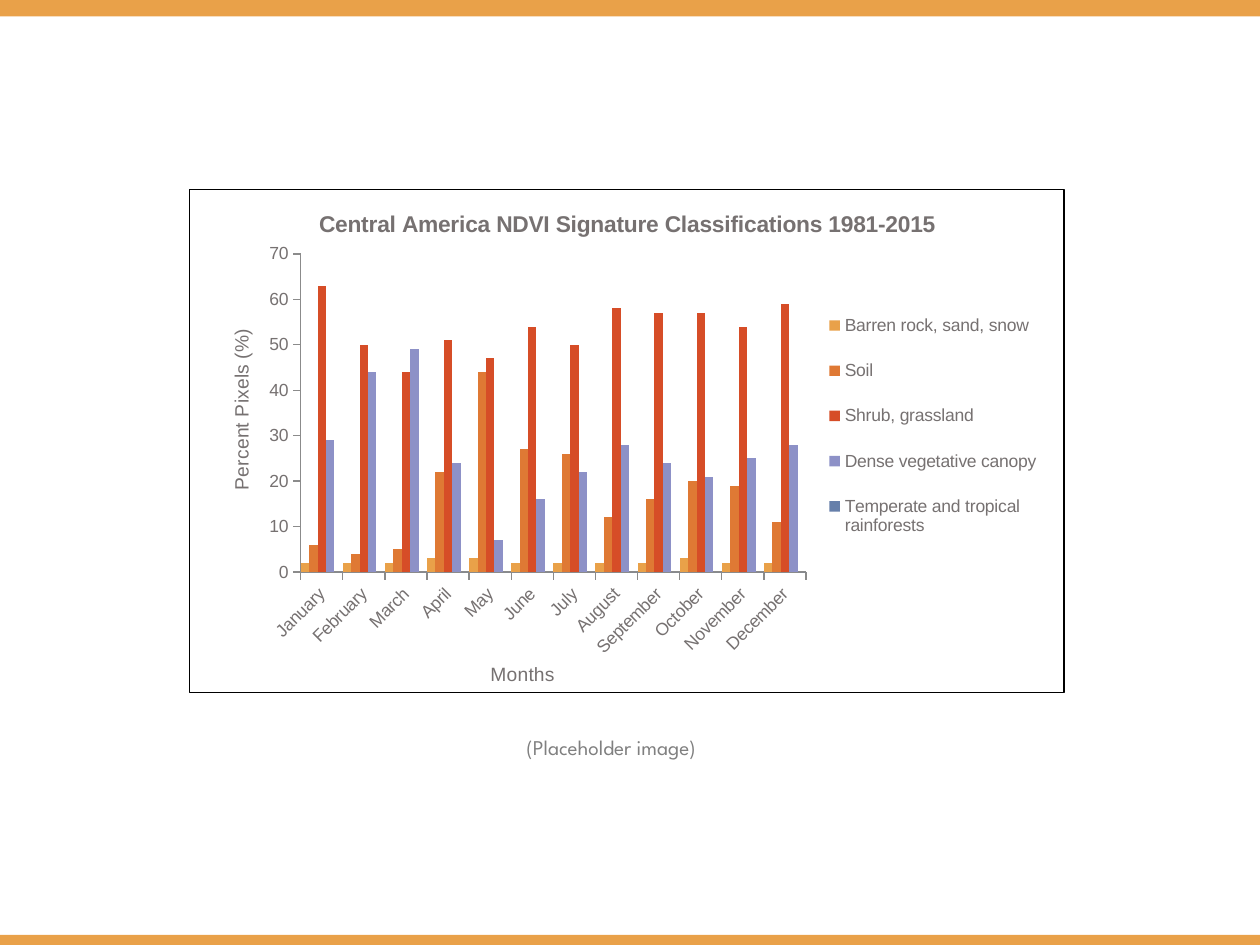
from lxml import etree
from pptx import Presentation
from pptx.chart.data import CategoryChartData
from pptx.dml.color import RGBColor
from pptx.enum.chart import XL_CHART_TYPE, XL_LEGEND_POSITION, XL_TICK_MARK
from pptx.enum.shapes import MSO_SHAPE
from pptx.enum.text import MSO_ANCHOR, MSO_AUTO_SIZE, PP_ALIGN
from pptx.oxml import parse_xml
from pptx.oxml.ns import nsdecls, qn
from pptx.util import Inches, Pt

COLUMN = XL_CHART_TYPE.COLUMN_CLUSTERED
RIGHT = XL_LEGEND_POSITION.RIGHT
OUTSIDE = XL_TICK_MARK.OUTSIDE
RECT = MSO_SHAPE.RECTANGLE
FIT_SHAPE = MSO_AUTO_SIZE.SHAPE_TO_FIT_TEXT
TOP = MSO_ANCHOR.TOP
LEFT = PP_ALIGN.LEFT

WIDTH, HEIGHT = Inches(10), Inches(7.5)
ORANGE = RGBColor(0xE9, 0xA1, 0x49)
RUST = RGBColor(0xDF, 0x79, 0x34)
RED = RGBColor(0xD6, 0x4D, 0x27)
LAVENDER = RGBColor(0x8D, 0x91, 0xC7)
BLUE = RGBColor(0x66, 0x7F, 0xAA)
TEXT_GRAY = RGBColor(0x76, 0x71, 0x71)
CAPTION_GRAY = RGBColor(0x80, 0x80, 0x80)
AXIS_GRAY = RGBColor(0x8B, 0x8B, 0x8B)

MONTHS = ["January", "February", "March", "April", "May", "June", "July",
          "August", "September", "October", "November", "December"]
CLASSES = [
    ("Barren rock, sand, snow", ORANGE, [2, 2, 2, 3, 3, 2, 2, 2, 2, 3, 2, 2]),
    ("Soil", RUST, [6, 4, 5, 22, 44, 27, 26, 12, 16, 20, 19, 11]),
    ("Shrub, grassland", RED, [63, 50, 44, 51, 47, 54, 50, 58, 57, 57, 54, 59]),
    ("Dense vegetative canopy", LAVENDER, [29, 44, 49, 24, 7, 16, 22, 28, 24, 21, 25, 28]),
    ("Temperate and tropical rainforests", BLUE, [0] * 12),
]
# Shares of the chart's size
PLOT_BOX = {"x": 0.127, "y": 0.128, "w": 0.578, "h": 0.633}
LEGEND_BOX = {"x": 0.72, "y": 0.2, "w": 0.26, "h": 0.54}
MONTHS_SPOT = {"x": 0.34, "y": 0.93}
PERCENT_SPOT = {"x": 0.04, "y": 0.27}


def set_font(font, size, color=TEXT_GRAY, name="Arial", bold=False):
    for key, value in {"size": Pt(size), "name": name, "bold": bold}.items():
        setattr(font, key, value)
    font.color.rgb = color


def set_title(title, text, size, bold=False):
    tf = title.text_frame
    tf.text = text
    set_font(tf.paragraphs[0].runs[0].font, size, bold=bold)


def add_band(slide, box):
    sp = slide.shapes.add_shape(RECT, *box)
    sp.shadow.inherit = False
    sp.fill.solid()
    sp.fill.fore_color.rgb = ORANGE
    sp.line.fill.background()


def place_part(part, box, after=None, target=None):
    """Fix a chart part at shares of the chart's size, its layout following the child named after."""
    for old in part.findall(qn("c:layout")):
        part.remove(old)
    layout = etree.Element(qn("c:layout"))
    manual = etree.SubElement(layout, qn("c:manualLayout"))
    values = {"layoutTarget": target} if target else {}
    values.update(xMode="edge", yMode="edge", **box)
    for tag, value in values.items():
        etree.SubElement(manual, qn(f"c:{tag}")).set("val", str(value))
    if after:
        part.find(qn(after)).addnext(layout)
    else:
        part.insert(0, layout)


def frame_chart(chart):
    """Draw a thin black border around the chart."""
    chart._chartSpace.chart.addnext(parse_xml(
        f'<c:spPr {nsdecls("c", "a")}><a:noFill/><a:ln w="9525"><a:solidFill>'
        '<a:srgbClr val="000000"/></a:solidFill></a:ln></c:spPr>'))


def format_axis(axis, title, spot):
    axis.has_major_gridlines = False
    axis.major_tick_mark = OUTSIDE
    set_title(axis.axis_title, title, 11)
    place_part(axis._element.find(qn("c:title")), spot, after="c:tx")
    set_font(axis.tick_labels.font, 10)
    axis.format.line.color.rgb = AXIS_GRAY
    axis.format.line.width = Pt(0.75)


def add_legend(chart):
    chart.has_legend = True
    legend = chart.legend
    legend.position = RIGHT
    legend.include_in_layout = False
    set_font(legend.font, 10)
    place_part(legend._element, LEGEND_BOX, after="c:legendPos")


def add_ndvi_chart(slide, box):
    data = CategoryChartData()
    data.categories = MONTHS
    for name, _, values in CLASSES:
        data.add_series(name, values)
    chart = slide.shapes.add_chart(COLUMN, *box, data).chart
    set_font(chart.font, 10)
    set_title(chart.chart_title, "Central America NDVI Signature Classifications 1981-2015",
              13, bold=True)

    plot = chart.plots[0]
    for key, value in {"gap_width": 0, "overlap": 0, "vary_by_categories": False}.items():
        setattr(plot, key, value)
    for series, (_, color, _) in zip(plot.series, CLASSES):
        series.format.fill.solid()
        series.format.fill.fore_color.rgb = color

    months, percent = chart.category_axis, chart.value_axis
    format_axis(months, "Months", MONTHS_SPOT)
    format_axis(percent, "Percent Pixels (%)", PERCENT_SPOT)
    months._element.find(qn("c:txPr")).find(qn("a:bodyPr")).set("rot", "-2700000")
    for key, value in {"minimum_scale": 0, "maximum_scale": 70, "major_unit": 10}.items():
        setattr(percent, key, value)

    add_legend(chart)
    place_part(chart._chartSpace.chart.plotArea, PLOT_BOX, target="inner")
    frame_chart(chart)


def add_caption(slide, box):
    tf = slide.shapes.add_textbox(*box).text_frame
    options = {"word_wrap": True, "auto_size": FIT_SHAPE, "vertical_anchor": TOP}
    for key, value in options.items():
        setattr(tf, key, value)
    p = tf.paragraphs[0]
    p.alignment = LEFT
    r = p.add_run()
    r.text = "(Placeholder image)"
    set_font(r.font, 12, CAPTION_GRAY, "League Spartan")


def main():
    prs = Presentation()
    prs.slide_width, prs.slide_height = WIDTH, HEIGHT
    slide = prs.slides.add_slide(prs.slide_layouts[6])
    top, bottom = Inches(0.13), Inches(0.08)
    add_band(slide, (0, 0, WIDTH, top))
    add_band(slide, (0, HEIGHT - bottom, WIDTH, bottom))
    add_ndvi_chart(slide, (int(WIDTH * 0.15), int(HEIGHT * 0.2), Inches(6.95), Inches(4)))
    add_caption(slide, (Inches(4.08), Inches(5.78), Inches(2.25), Inches(0.3)))
    prs.save("out.pptx")


if __name__ == "__main__":
    main()
